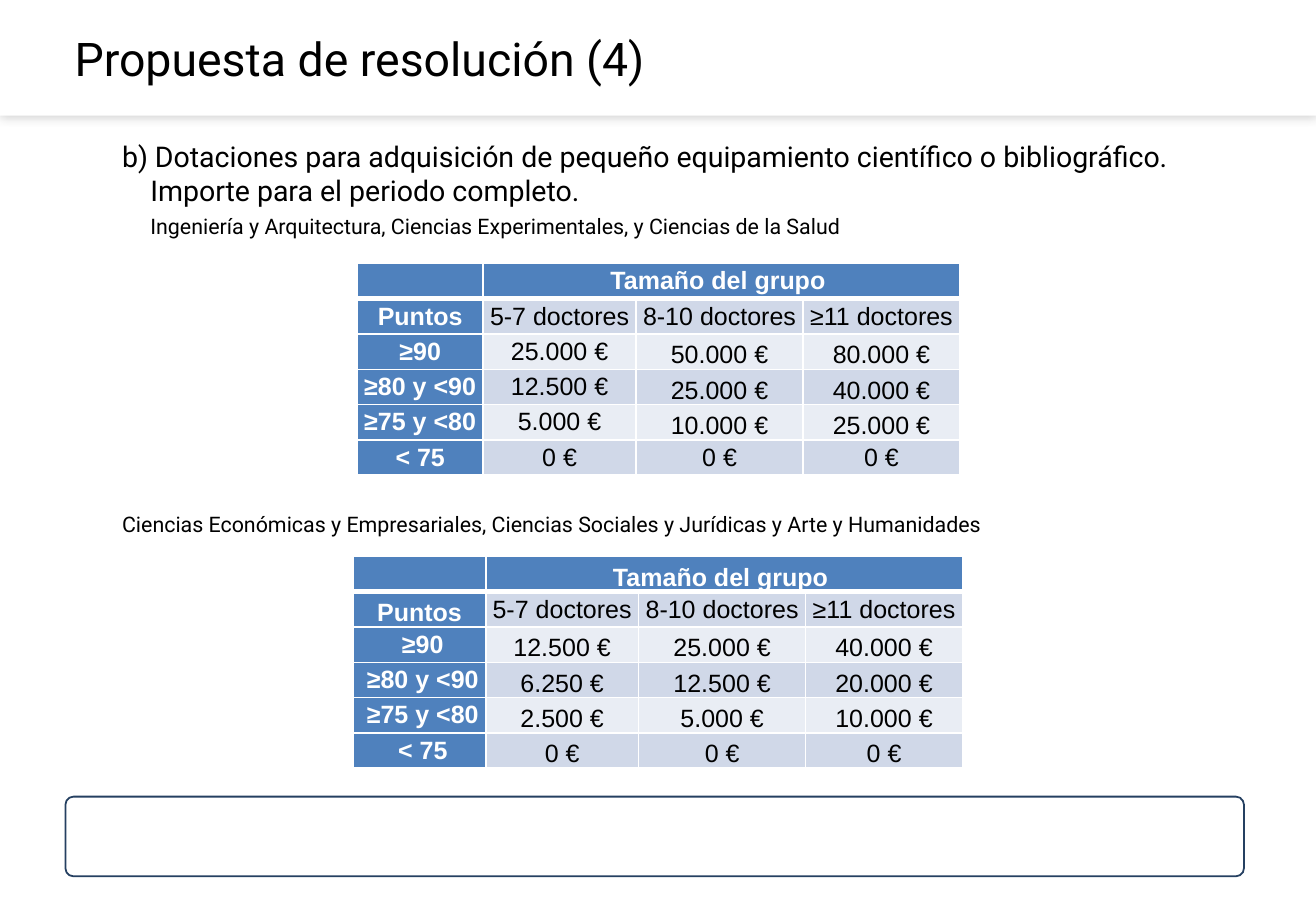
from dataclasses import dataclass

from lxml import etree
from pptx import Presentation
from pptx.dml.color import RGBColor
from pptx.enum.shapes import MSO_SHAPE
from pptx.enum.text import MSO_ANCHOR, PP_ALIGN
from pptx.oxml.ns import qn
from pptx.util import Inches, Pt

RECTANGLE = MSO_SHAPE.RECTANGLE
ROUNDED = MSO_SHAPE.ROUNDED_RECTANGLE
TOP = MSO_ANCHOR.TOP
MIDDLE = MSO_ANCHOR.MIDDLE
BOTTOM = MSO_ANCHOR.BOTTOM
CENTER = PP_ALIGN.CENTER


@dataclass(frozen=True)
class Theme:
    text_font: str = "Roboto"
    table_font: str = "Arial"
    title_size: int = 26
    body_size: int = 16
    caption_size: int = 12
    table_size: int = 14
    black: str = "000000"
    white: str = "FFFFFF"
    navy: str = "254061"
    header: str = "4F81BD"
    dark_band: str = "D0D8E8"
    light_band: str = "E9EDF4"


THEME = Theme()

GROUP_HEADER = [
    ["", "Tamaño del grupo ", "", ""],
    ["Puntos", "5-7 doctores", "8-10 doctores", "≥11 doctores"],
]
SCORES = ["≥90", "≥80 y <90", "≥75 y <80", "< 75"]
SCIENCE_AMOUNTS = [
    ["25.000 €", "50.000 €", "80.000 €"],
    ["12.500 €", "25.000 €", "40.000 €"],
    ["5.000 €", "10.000 €", "25.000 €"],
    ["0 €", "0 €", "0 €"],
]
HUMANITIES_AMOUNTS = [
    ["12.500 €", "25.000 €", "40.000 €"],
    ["6.250 €", "12.500 €", "20.000 €"],
    ["2.500 €", "5.000 €", "10.000 €"],
    ["0 €", "0 €", "0 €"],
]
SCIENCE_ANCHORS = ["mmmm", "mmmm", "mmbb", "mmbb", "mmbb", "mmmm"]
HUMANITIES_ANCHORS = ["bbbb", "bmmm", "mbbb", "mbbb", "mbbb", "mbbb"]
GROUP_WIDTHS = [1.19, 1.3, 1.22]


def color(value):
    return RGBColor.from_string(value)


def add_run(paragraph, text, font, size, fill, bold=False):
    run = paragraph.add_run()
    run.text = text
    run.font.name = font
    run.font.size = Pt(size)
    run.font.bold = bold
    run.font.color.rgb = color(fill)


def add_text_frame(slide, left, top, width, height, anchor=TOP):
    box = slide.shapes.add_textbox(Inches(left), Inches(top), Inches(width), Inches(height))
    frame = box.text_frame
    frame.word_wrap = True
    frame.vertical_anchor = anchor
    frame.margin_left = frame.margin_right = Inches(0.07)
    frame.margin_top = frame.margin_bottom = Inches(0.03)
    return frame


def indent(paragraph, left, first=0.0):
    properties = paragraph._p.get_or_add_pPr()
    properties.set("marL", str(Inches(left)))
    properties.set("indent", str(Inches(first)))


def add_panel(slide, kind, left, top, width, height):
    shape = slide.shapes.add_shape(kind, Inches(left), Inches(top), Inches(width), Inches(height))
    shape.shadow.inherit = False
    shape.fill.solid()
    shape.fill.fore_color.rgb = color(THEME.white)
    return shape


def add_title_band(slide, left, top, width, height):
    band = add_panel(slide, RECTANGLE, left, top, width, height)
    band.line.fill.background()
    effects = band._element.spPr.find(qn("a:effectLst"))
    shadow = etree.SubElement(effects, qn("a:outerShdw"), blurRad=str(Pt(6)), dist="0",
                              dir="13500000", algn="br", rotWithShape="0")
    shade = etree.SubElement(shadow, qn("a:srgbClr"), val=THEME.black)
    etree.SubElement(shade, qn("a:alpha"), val="20000")
    frame = add_text_frame(slide, left + 0.51, top + 0.09, width - 1.03, height - 0.17, MIDDLE)
    add_run(frame.paragraphs[0], "Propuesta de resolución (4)",
            THEME.text_font, THEME.title_size, THEME.black)


def add_footer_box(slide, left, top, width, height):
    box = add_panel(slide, ROUNDED, left, top, width, height)
    box.adjustments[0] = 0.1
    box.line.color.rgb = color(THEME.navy)
    box.line.width = Pt(1)


def add_introduction(slide, left, top, width, height):
    frame = add_text_frame(slide, left, top, width, height)
    heading = frame.paragraphs[0]
    indent(heading, 0.57, -0.22)
    add_run(heading, "b) Dotaciones para adquisición de pequeño equipamiento científico o "
            "bibliográfico. Importe para el periodo completo.",
            THEME.text_font, THEME.body_size, THEME.black)
    caption = frame.add_paragraph()
    caption.space_before = Pt(3)
    indent(caption, 0.57)
    add_run(caption, "Ingeniería y Arquitectura, Ciencias Experimentales, y Ciencias de la Salud",
            THEME.text_font, THEME.caption_size, THEME.black)


def add_second_caption(slide, left, top, width, height):
    caption = add_text_frame(slide, left, top, width, height).paragraphs[0]
    indent(caption, 0.57, -0.22)
    add_run(caption, "Ciencias Económicas y Empresariales, Ciencias Sociales y Jurídicas "
            "y Arte y Humanidades", THEME.text_font, THEME.caption_size, THEME.black)


def set_borders(cell, top, bottom):
    properties = cell._tc.get_or_add_tcPr()
    widths = {"a:lnL": 1, "a:lnR": 1, "a:lnT": top, "a:lnB": bottom}
    for position, (tag, width) in enumerate(widths.items()):
        line = etree.Element(qn(tag), w=str(Pt(width)))
        fill = etree.SubElement(line, qn("a:solidFill"))
        etree.SubElement(fill, qn("a:srgbClr"), val=THEME.white)
        properties.insert(position, line)


def fill_cell(cell, text, row, column, anchor, score_indent):
    is_header = row == 0 or column == 0
    band = THEME.light_band if row in (2, 4) else THEME.dark_band
    cell.fill.solid()
    cell.fill.fore_color.rgb = color(THEME.header if is_header else band)
    cell.margin_left = cell.margin_right = Inches(0.03)
    cell.margin_top = cell.margin_bottom = 0
    cell.vertical_anchor = anchor
    set_borders(cell, 3 if row == 1 else 1, 3 if row == 0 else 1)
    paragraph = cell.text_frame.paragraphs[0]
    paragraph.alignment = CENTER
    if column == 0 and row > 1:
        indent(paragraph, score_indent)
    if text:
        add_run(paragraph, text, THEME.table_font, THEME.table_size,
                THEME.white if is_header else THEME.black, is_header)
    else:
        etree.SubElement(paragraph._p, qn("a:endParaRPr"), sz=str(THEME.table_size * 100))


def add_amount_table(slide, left, top, height, score_width, amounts, anchors, score_indent=0.0):
    rows = GROUP_HEADER + [[score] + line for score, line in zip(SCORES, amounts)]
    widths = [score_width] + GROUP_WIDTHS
    frame = slide.shapes.add_table(len(rows), len(widths), Inches(left), Inches(top),
                                   Inches(sum(widths)), Inches(height))
    table = frame.table
    for column, width in zip(table.columns, widths):
        column.width = Inches(width)
    for row in table.rows:
        row.height = Inches(height / len(rows))
    for row, texts in enumerate(rows):
        for column, text in enumerate(texts):
            anchor = BOTTOM if anchors[row][column] == "b" else MIDDLE
            fill_cell(table.cell(row, column), text, row, column, anchor, score_indent)
    table.cell(0, 1).merge(table.cell(0, 3))


def main():
    presentation = Presentation()
    presentation.slide_width = Inches(10.24)
    presentation.slide_height = Inches(7.09)
    slide = presentation.slides.add_slide(presentation.slide_layouts[6])
    add_title_band(slide, 0, 0, 10.24, 0.9)
    add_footer_box(slide, 0.51, 6.2, 9.17, 0.62)
    add_introduction(slide, 0.53, 1.05, 9.18, 0.85)
    add_second_caption(slide, 0.53, 3.95, 9.18, 0.27)
    add_amount_table(slide, 2.78, 2.05, 1.65, 0.98, SCIENCE_AMOUNTS, SCIENCE_ANCHORS)
    add_amount_table(slide, 2.75, 4.33, 1.65, 1.03, HUMANITIES_AMOUNTS, HUMANITIES_ANCHORS, 0.05)
    presentation.save("out.pptx")


if __name__ == "__main__":
    main()
